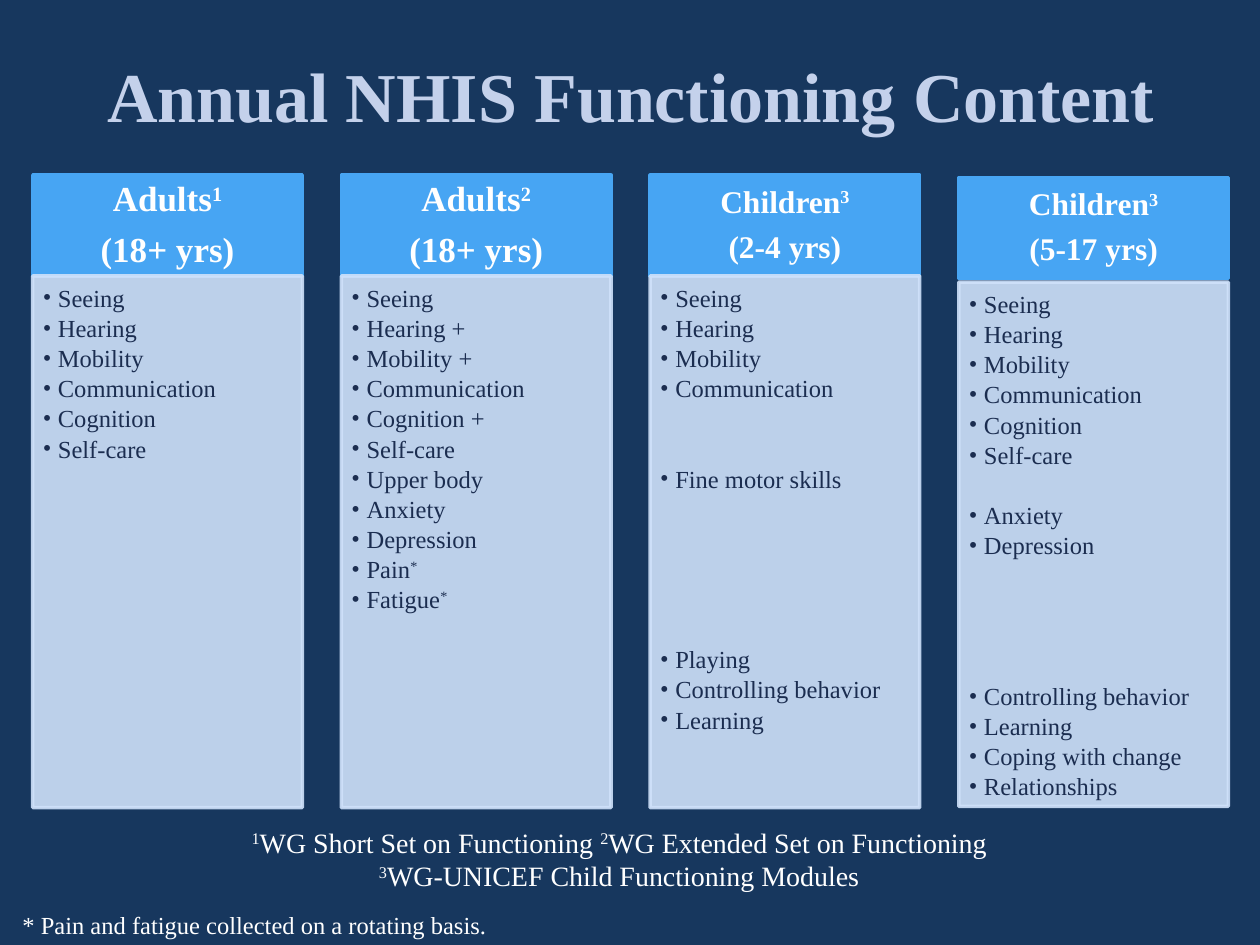
from lxml.etree import SubElement
from pptx import Presentation
from pptx.dml.color import RGBColor
from pptx.enum.shapes import MSO_SHAPE
from pptx.enum.text import MSO_ANCHOR, PP_ALIGN
from pptx.oxml.ns import qn
from pptx.util import Inches, Pt

TITLE = "Annual NHIS Functioning Content"
# Text between carets is superscript; None is a row left open in the column.
COLUMNS = [
    {"heading": ["Adults^1^", "(18+ yrs)"], "size": 20,
     "items": ["Seeing", "Hearing", "Mobility", "Communication", "Cognition", "Self-care"]},
    {"heading": ["Adults^2^", "(18+ yrs)"], "size": 20,
     "items": ["Seeing", "Hearing +", "Mobility +", "Communication", "Cognition +",
               "Self-care", "Upper body", "Anxiety", "Depression", "Pain^*^", "Fatigue^*^"]},
    {"heading": ["Children^3^", "(2-4 yrs)"], "size": 18,
     "items": ["Seeing", "Hearing", "Mobility", "Communication", None, None,
               "Fine motor skills", None, None, None, None, None,
               "Playing", "Controlling behavior", "Learning"]},
    {"heading": ["Children^3^", "(5-17 yrs)"], "size": 18, "top": 1.41,
     "body_top": 2.24, "body_height": 4.16,
     "items": ["Seeing", "Hearing", "Mobility", "Communication", "Cognition", "Self-care",
               None, "Anxiety", "Depression", None, None, None, None,
               "Controlling behavior", "Learning", "Coping with change", "Relationships"]},
]
SOURCES = ["^1^WG Short Set on Functioning ^2^WG Extended Set on Functioning",
           "^3^WG-UNICEF Child Functioning Modules"]
FOOTNOTE = ["* Pain and fatigue collected on a rotating basis."]

FONT = "Times New Roman"
NAVY, INK, WHITE = "17375E", "1B2D50", "FFFFFF"
TITLE_BLUE, HEADING_BLUE, PALE_BLUE = "C4D1EB", "47A5F3", "CFE1FA"
LEFT, COLUMN_STEP, COLUMN_WIDTH = 0.26, 2.45, 2.14
HEADING_TOP, HEADING_HEIGHT = 1.39, 0.8
BODY_TOP, BODY_HEIGHT = 2.19, 4.22
ITEM_SIZE, ITEM_SPACE, ROW_PITCH = 14, 2.1, 17.2
HEADING_SPACE_SHARE = 0.36


def paint(color_format, value, opacity=None):
    color_format.rgb = RGBColor.from_string(value)
    if opacity:
        for node in color_format._xFill.iter(qn("a:srgbClr")):
            SubElement(node, qn("a:alpha"), val=str(opacity * 1000))


def write(paragraph, text, size, color, bold=False, **formats):
    """Add the text as runs, raising the parts between carets."""
    for name, value in formats.items():
        setattr(paragraph, name, value)
    for index, part in enumerate(text.split("^")):
        if not part:
            continue
        run = paragraph.add_run()
        run.text = part
        for name, value in {"name": FONT, "size": Pt(size), "bold": bold}.items():
            setattr(run.font, name, value)
        paint(run.font.color, color)
        if index % 2:
            run.font._element.set("baseline", "30000")


def paragraphs_for(frame, lines):
    """Yield each line with a paragraph of its own."""
    for index, line in enumerate(lines):
        yield (frame.add_paragraph() if index else frame.paragraphs[0]), line


def set_frame(frame, insets, anchor):
    frame.word_wrap = True
    frame.vertical_anchor = anchor
    for side, inset in zip(("left", "top", "right", "bottom"), insets):
        setattr(frame, f"margin_{side}", Inches(inset))


def add_panel(slide, box, color, insets, anchor, opacity=None):
    shape = slide.shapes.add_shape(MSO_SHAPE.RECTANGLE, *map(Inches, box))
    shape.shadow.inherit = False
    for fill in (shape.fill, shape.line.fill):
        fill.solid()
        paint(fill.fore_color, color, opacity)
    shape.line.width = Pt(2)
    set_frame(shape.text_frame, insets, anchor)
    return shape.text_frame


def add_bullet(paragraph):
    properties = paragraph._p.get_or_add_pPr()
    properties.set("marL", str(Inches(0.12)))
    properties.set("indent", str(-Inches(0.12)))
    SubElement(properties, qn("a:buFont"), typeface=FONT)
    SubElement(properties, qn("a:buChar"), char="•")


def add_column(slide, left, column):
    size = column["size"]
    side = size * 0.008
    frame = add_panel(
        slide, (left, column.get("top", HEADING_TOP), COLUMN_WIDTH, HEADING_HEIGHT),
        HEADING_BLUE, (side, side / 2, side, side / 2), MSO_ANCHOR.MIDDLE)
    for paragraph, line in paragraphs_for(frame, column["heading"]):
        write(paragraph, line, size, WHITE, bold=True, alignment=PP_ALIGN.CENTER,
              line_spacing=0.9, space_after=Pt(size * HEADING_SPACE_SHARE))

    frame = add_panel(
        slide, (left, column.get("body_top", BODY_TOP), COLUMN_WIDTH,
                column.get("body_height", BODY_HEIGHT)),
        PALE_BLUE, (0.08, 0.08, 0.11, 0.12), MSO_ANCHOR.TOP, opacity=90)
    rows = [(row, item) for row, item in enumerate(column["items"]) if item]
    previous = -1
    for paragraph, (row, item) in paragraphs_for(frame, rows):
        write(paragraph, item, ITEM_SIZE, INK, alignment=PP_ALIGN.LEFT, level=1,
              line_spacing=0.9, space_after=Pt(ITEM_SPACE),
              space_before=Pt((row - previous - 1) * ROW_PITCH))
        add_bullet(paragraph)
        previous = row


def add_note(slide, box, lines, size, alignment):
    frame = slide.shapes.add_textbox(*map(Inches, box)).text_frame
    set_frame(frame, (0.1, 0.05, 0.1, 0.05), MSO_ANCHOR.TOP)
    for paragraph, line in paragraphs_for(frame, lines):
        write(paragraph, line, size, WHITE, alignment=alignment)


def main():
    presentation = Presentation()
    presentation.slide_width, presentation.slide_height = Inches(10), Inches(7.5)
    slide = presentation.slides.add_slide(presentation.slide_layouts[5])
    slide.background.fill.solid()
    paint(slide.background.fill.fore_color, NAVY)

    title = slide.shapes.title
    title.left, title.top, title.width, title.height = map(Inches, (0.42, 0.25, 9.17, 1))
    set_frame(title.text_frame, (0.1, 0.05, 0.1, 0.05), MSO_ANCHOR.MIDDLE)
    write(title.text_frame.paragraphs[0], TITLE, 40, TITLE_BLUE, bold=True,
          alignment=PP_ALIGN.CENTER)

    for index, column in enumerate(COLUMNS):
        add_column(slide, LEFT + index * COLUMN_STEP, column)
    add_note(slide, (0, 6.5, 9.83, 0.64), SOURCES, 16, PP_ALIGN.CENTER)
    add_note(slide, (0.08, 7.17, 5.83, 0.34), FOOTNOTE, 14, PP_ALIGN.LEFT)
    presentation.save("out.pptx")


if __name__ == "__main__":
    main()
